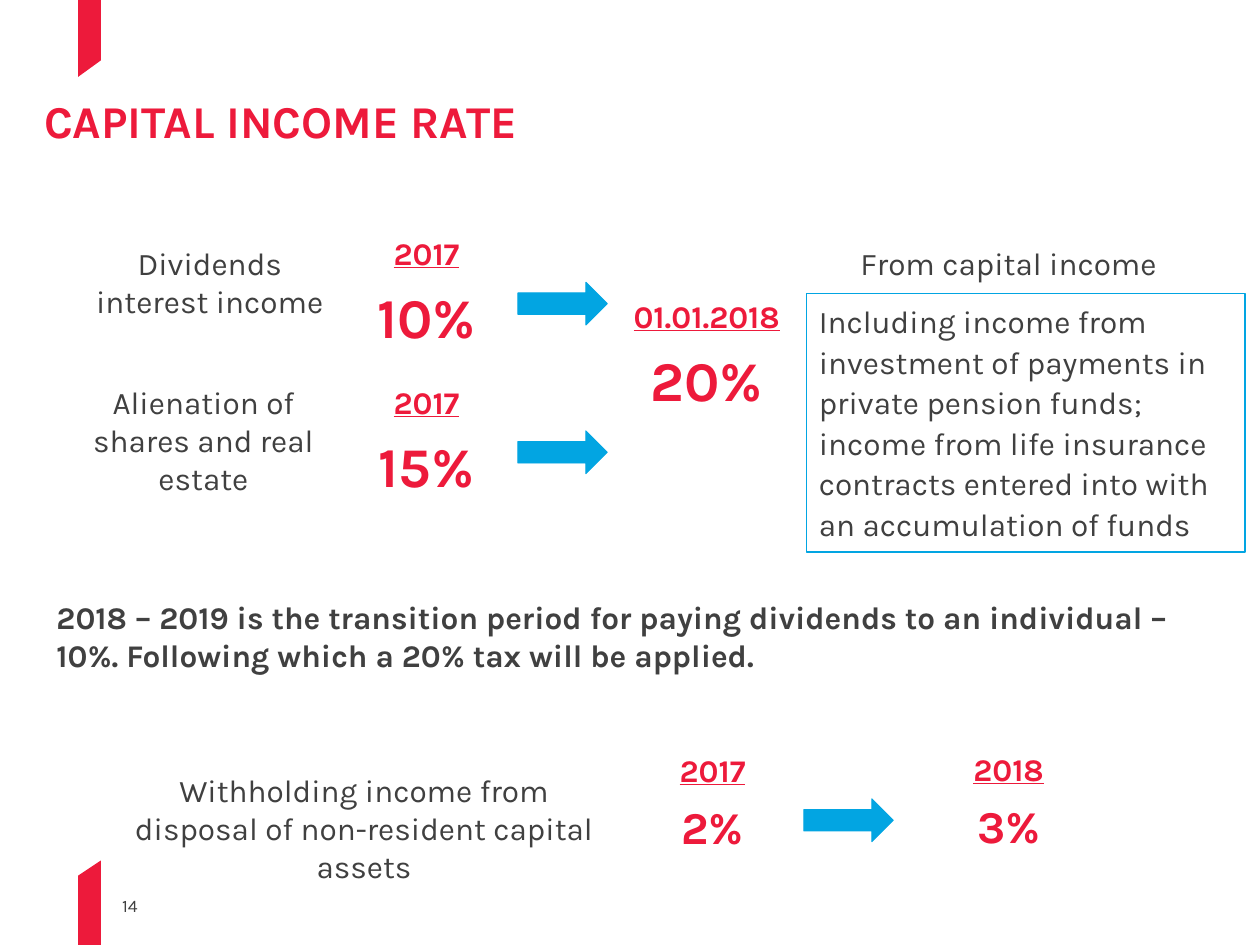
"""Build the capital income rate slide; lengths are px at 100 to the inch."""
from dataclasses import dataclass
from typing import NamedTuple

from pptx import Presentation
from pptx.dml.color import RGBColor
from pptx.enum.shapes import MSO_SHAPE as Preset
from pptx.enum.text import MSO_ANCHOR as Anchor, MSO_AUTO_SIZE as AutoSize, PP_ALIGN as Align
from pptx.util import Emu, Pt

EMU_PER_PX = 9144


@dataclass(frozen=True)
class Theme:
    font: str = "Karla"
    red: RGBColor = RGBColor(0xED, 0x1A, 0x3B)
    blue: RGBColor = RGBColor(0x02, 0xA5, 0xE2)
    grey: RGBColor = RGBColor(0x40, 0x40, 0x40)
    title: int = 26
    body: int = 18
    large_rate: int = 32
    small_rate: int = 26
    page: int = 10


class Box(NamedTuple):
    left: int
    top: int
    width: int
    height: int


class Rate(NamedTuple):
    box: Box
    date: str
    value: str
    size: int


class Label(NamedTuple):
    box: Box
    lines: tuple[str, ...]


THEME = Theme()

RATES = (
    Rate(Box(273, 186, 131, 110), "2017", "10%", THEME.large_rate),
    Rate(Box(473, 236, 176, 150), "01.01.2018", "20%", THEME.large_rate),
    Rate(Box(273, 304, 131, 110), "2017", "15%", THEME.large_rate),
    Rate(Box(500, 596, 131, 110), "2017", "2%", THEME.small_rate),
    Rate(Box(735, 595, 131, 110), "2018", "3%", THEME.small_rate),
)
LABELS = (
    Label(Box(76, 194, 181, 61), ("Dividends", "interest income ")),
    Label(Box(71, 304, 181, 91), ("Alienation of shares and real estate",)),
    Label(Box(640, 194, 321, 30), ("From capital income",)),
    Label(Box(96, 612, 386, 61),
          ("Withholding income from disposal of non-resident capital assets",)),
)
ARROWS = ((411, 224), (411, 342), (638, 634))
RIBBONS = (
    ((62, 695), (62, 750), (80, 750), (80, 683)),
    ((80, 48), (80, 0), (62, 0), (62, 61)),
)


def px(length: int) -> Emu:
    return Emu(length * EMU_PER_PX)


def place(shape, box: Box) -> None:
    shape.left, shape.top, shape.width, shape.height = map(px, box)


def prepare_frame(frame, inset: bool = False, anchor=Anchor.TOP):
    frame.word_wrap = True
    frame.auto_size = AutoSize.NONE
    frame.vertical_anchor = anchor
    horizontal, vertical = (px(10), px(5)) if inset else (0, 0)
    frame.margin_left = frame.margin_right = horizontal
    frame.margin_top = frame.margin_bottom = vertical
    return frame


def add_frame(slide, box: Box, **options):
    return prepare_frame(slide.shapes.add_textbox(*map(px, box)).text_frame, **options)


def write(frame, text: str, *, size: int = THEME.body, color: RGBColor = THEME.grey,
          bold: bool = False, underline: bool = False, align=Align.LEFT,
          after: int = 0, spacing: float = 1.0) -> None:
    paragraph = frame.paragraphs[0] if not frame.text else frame.add_paragraph()
    paragraph.alignment = align
    paragraph.space_before = Pt(0)
    paragraph.space_after = Pt(after)
    paragraph.line_spacing = spacing
    run = paragraph.add_run()
    run.text = text
    run.font.name = THEME.font
    run.font.size = Pt(size)
    run.font.color.rgb = color
    run.font.bold = bold
    run.font.underline = underline


def add_rate(slide, rate: Rate) -> None:
    frame = add_frame(slide, rate.box)
    style = dict(color=THEME.red, bold=True, align=Align.CENTER, after=6)
    write(frame, rate.date, underline=True, **style)
    write(frame, rate.value, size=rate.size, **style)


def add_label(slide, label: Label) -> None:
    frame = add_frame(slide, label.box)
    for line in label.lines:
        write(frame, line, align=Align.CENTER)


def add_arrow(slide, left: int, top: int) -> None:
    arrow = slide.shapes.add_shape(Preset.RIGHT_ARROW, *map(px, (left, top, 71, 34)))
    arrow.shadow.inherit = False
    arrow.fill.solid()
    arrow.fill.fore_color.rgb = THEME.blue
    arrow.line.color.rgb = THEME.blue
    arrow.line.width = Pt(0.5)


def add_ribbon(slide, points: tuple[tuple[int, int], ...]) -> None:
    builder = slide.shapes.build_freeform(*points[0], scale=EMU_PER_PX)
    builder.add_line_segments(points[1:], close=True)
    ribbon = builder.convert_to_shape()
    ribbon.shadow.inherit = False
    ribbon.fill.solid()
    ribbon.fill.fore_color.rgb = THEME.red
    ribbon.line.fill.background()


def add_note(slide, box: Box, text: str) -> None:
    note = slide.shapes.add_shape(Preset.RECTANGLE, *map(px, box))
    note.shadow.inherit = False
    note.fill.background()
    note.line.color.rgb = THEME.blue
    note.line.width = Pt(1)
    write(prepare_frame(note.text_frame, inset=True), text, spacing=1.07)


def main() -> None:
    presentation = Presentation()
    presentation.slide_width, presentation.slide_height = px(1000), px(750)
    slide = presentation.slides.add_slide(presentation.slide_layouts[5])

    for points in RIBBONS:
        add_ribbon(slide, points)
    write(add_frame(slide, Box(97, 710, 45, 17), anchor=Anchor.BOTTOM), "14", size=THEME.page)

    title = slide.shapes.title
    place(title, Box(35, 82, 926, 35))
    write(prepare_frame(title.text_frame), "CAPITAL INCOME RATE",
          size=THEME.title, color=THEME.red, bold=True, spacing=0.8)

    for rate in RATES:
        add_rate(slide, rate)
    for left, top in ARROWS:
        add_arrow(slide, left, top)
    for label in LABELS:
        add_label(slide, label)

    add_note(slide, Box(640, 233, 348, 205),
             "Including income from investment of payments in private pension funds; "
             "income from life insurance contracts entered into with an accumulation of funds")
    write(add_frame(slide, Box(35, 470, 953, 71), inset=True),
          "2018 – 2019 is the transition period for paying dividends to an individual – 10%. "
          "Following which a 20% tax will be applied.", bold=True, after=6)
    presentation.save("out.pptx")


if __name__ == "__main__":
    main()
